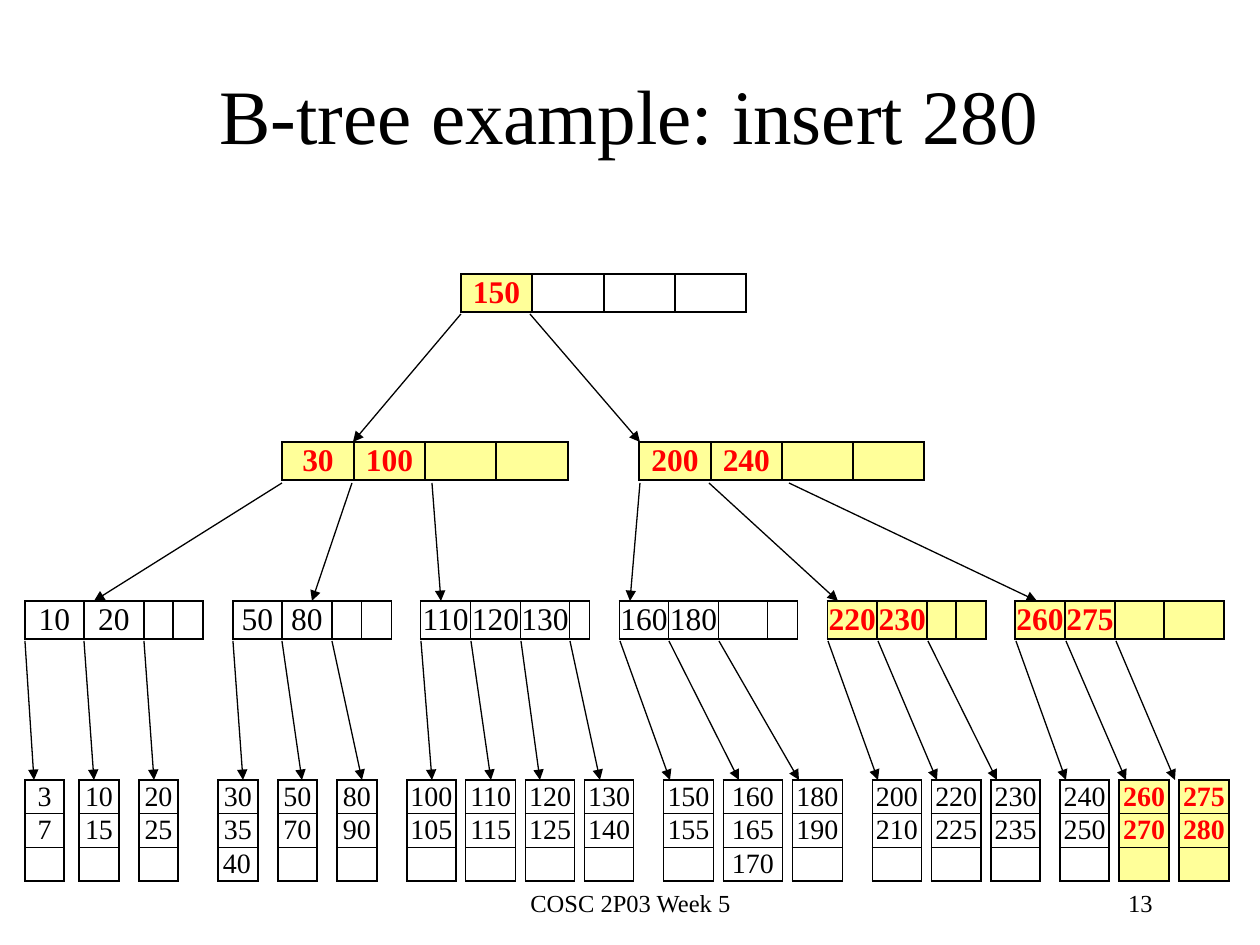
"""Build the B-tree insertion slide: three levels of index nodes above a row of leaves."""
import pptx
import pptx.dml.color
import pptx.enum.shapes
import pptx.enum.text
import pptx.oxml
import pptx.oxml.ns
import pptx.util

PX = pptx.util.Inches(1) // 126
FONT = "Times New Roman"
BLACK, RED, YELLOW, WHITE = "000000", "FF0000", "FFFF99", "FFFFFF"
NO_GRID = "{2D5ABB26-0587-4C30-8999-92F81FD0307C}"
ALIGN = pptx.enum.text.PP_ALIGN
ANCHOR = pptx.enum.text.MSO_ANCHOR
NODE_HEIGHT, LEAF_ROW_HEIGHT = 38, 31
NODE_SIZE, LEAF_SIZE = 18, 16

LABELS = [
    ("B-tree example: insert 280", (94, 35, 1071, 158), 44, ALIGN.CENTER, ANCHOR.MIDDLE),
    ("COSC 2P03 Week 5", (431, 882, 399, 63), 14, ALIGN.CENTER, ANCHOR.TOP),
    ("13", (903, 882, 262, 63), 14, ALIGN.RIGHT, ANCHOR.TOP),
]

# Each node: cell edges, keys, number of highlighted cells
ROOT = [((461, 532, 604, 675, 746), ["150"], 1)]
BRANCHES = [
    ((282, 354, 425, 496, 568), ["30", "100"], 4),
    ((639, 711, 782, 853, 924), ["200", "240"], 4),
]
INDEX = [
    ((25, 84, 144, 173, 203), ["10", "20"], 0),
    ((233, 282, 332, 362, 392), ["50", "80"], 0),
    ((421, 471, 521, 570, 590), ["110", "120", "130"], 0),
    ((620, 669, 719, 768, 798), ["160", "180"], 0),
    ((828, 878, 928, 957, 987), ["220", "230"], 4),
    ((1016, 1066, 1116, 1165, 1225), ["260", "275"], 4),
]
LEAVES = [
    ((25, 64), ["3", "7"], 0), ((79, 119), ["10", "15"], 0),
    ((139, 178), ["20", "25"], 0), ((218, 258), ["30", "35", "40"], 0),
    ((278, 317), ["50", "70"], 0), ((337, 377), ["80", "90"], 0),
    ((407, 456), ["100", "105"], 0), ((466, 516), ["110", "115"], 0),
    ((526, 575), ["120", "125"], 0), ((585, 634), ["130", "140"], 0),
    ((664, 714), ["150", "155"], 0), ((724, 783), ["160", "165", "170"], 0),
    ((793, 843), ["180", "190"], 0), ((873, 922), ["200", "210"], 0),
    ((932, 982), ["220", "225"], 0), ((992, 1041), ["230", "235"], 0),
    ((1061, 1110), ["240", "250"], 0), ((1120, 1170), ["260", "270"], 3),
    ((1180, 1230), ["275", "280"], 3),
]
LEFT_ALIGNED = {"40"}
LEVELS = [
    (274, NODE_HEIGHT, 1, NODE_SIZE, ROOT),
    (442, NODE_HEIGHT, 1, NODE_SIZE, BRANCHES),
    (601, NODE_HEIGHT, 1, NODE_SIZE, INDEX),
    (780, LEAF_ROW_HEIGHT, 3, LEAF_SIZE, LEAVES),
]

ROOT_POINTERS = [(461, 353), (530, 640)]
BRANCH_POINTERS = [(282, 94), (352, 312), (432, 441), (640, 630), (709, 838), (789, 1037)]
LEAF_TIPS = [
    (34, 94, 154), (243, 302, 362), (432, 491, 540, 600),
    (670, 739, 799), (878, 937, 997), (1066, 1126, 1175),
]
INDEX_POINTERS = [
    pair for (edges, _, _), tips in zip(INDEX, LEAF_TIPS) for pair in zip(edges, tips)
]
POINTERS = [(314, 442, ROOT_POINTERS), (483, 601, BRANCH_POINTERS), (641, 780, INDEX_POINTERS)]


def colour(value):
    return pptx.dml.color.RGBColor.from_string(value)


def apply(target, values):
    for name, value in values.items():
        setattr(target, name, value)


def write(paragraph, text, size, ink, bold, align):
    paragraph.alignment = align
    run = paragraph.add_run()
    run.text = text
    apply(run.font, {"name": FONT, "size": pptx.util.Pt(size), "bold": bold})
    run.font.color.rgb = colour(ink)


def add_label(slide, text, box, size, align, anchor):
    frame = slide.shapes.add_textbox(*(v * PX for v in box)).text_frame
    apply(frame, {"word_wrap": True, "vertical_anchor": anchor})
    write(frame.paragraphs[0], text, size, BLACK, False, align)


def add_pointer(slide, start, top, tip, bottom):
    pointer = slide.shapes.add_connector(
        pptx.enum.shapes.MSO_CONNECTOR.STRAIGHT, start * PX, top * PX, tip * PX, bottom * PX)
    pointer.line.width = pptx.util.Pt(0.75)
    pointer.line.color.rgb = colour(BLACK)
    line = pointer.line._get_or_add_ln()
    line.append(pptx.oxml.parse_xml(
        f'<a:tailEnd {pptx.oxml.ns.nsdecls("a")} type="triangle"/>'))
    line.getparent().append(pptx.oxml.parse_xml(
        f'<a:effectLst {pptx.oxml.ns.nsdecls("a")}/>'))


def add_borders(cell, sides):
    for position, side in enumerate(sides):
        cell._tc.get_or_add_tcPr().insert(position, pptx.oxml.parse_xml(
            f'<a:ln{side} {pptx.oxml.ns.nsdecls("a")} w="12700"><a:solidFill>'
            f'<a:srgbClr val="{BLACK}"/></a:solidFill></a:ln{side}>'))


def fill_cell(cell, key, size, marked, margin):
    apply(cell, {"margin_left": margin, "margin_right": margin, "margin_top": 0,
                 "margin_bottom": 0, "vertical_anchor": ANCHOR.MIDDLE})
    paragraph = cell.text_frame.paragraphs[0]
    if key:
        align = ALIGN.LEFT if key in LEFT_ALIGNED else ALIGN.CENTER
        write(paragraph, key, size, RED if marked else BLACK, marked, align)
    else:
        paragraph._p.get_or_add_endParaRPr().set("sz", str(size * 100))


def add_level(slide, top, row_height, row_count, size, nodes):
    edges = [edge for node_edges, _, _ in nodes for edge in node_edges]
    table = slide.shapes.add_table(
        row_count, len(edges) - 1, edges[0] * PX, top * PX,
        (edges[-1] - edges[0]) * PX, row_count * row_height * PX).table
    apply(table, {"first_row": False, "horz_banding": False})
    table._tbl.tblPr.find(pptx.oxml.ns.qn("a:tableStyleId")).text = NO_GRID
    for column, left, right in zip(table.columns, edges, edges[1:]):
        column.width = (right - left) * PX
    for row in table.rows:
        row.height = row_height * PX

    contents = {}
    first = 0
    for node_edges, keys, marked_count in nodes:
        width = len(node_edges) - 1
        narrow_leaf = row_count > 1 and node_edges[-1] - node_edges[0] <= 40
        for slot in range(width * row_count):
            key = keys[slot] if slot < len(keys) else ""
            contents[slot // width, first + slot % width] = (
                key, slot < marked_count, 5 * PX if narrow_leaf else 0)
        first += width + 1

    for row in range(row_count):
        for column in range(len(edges) - 1):
            cell = table.cell(row, column)
            in_node = (row, column) in contents
            key, marked, margin = contents.get((row, column), ("", False, 0))
            fill_cell(cell, key, size, marked, margin)
            if in_node:
                cell.fill.solid()
                cell.fill.fore_color.rgb = colour(YELLOW if marked else WHITE)
            else:
                cell.fill.background()
            add_borders(cell, "LRTB" if in_node else "LR")


def main():
    deck = pptx.Presentation()
    apply(deck, {"slide_width": 1260 * PX, "slide_height": 945 * PX})
    slide = deck.slides.add_slide(deck.slide_layouts[6])
    for label in LABELS:
        add_label(slide, *label)
    for top, bottom, pairs in POINTERS:
        for start, tip in pairs:
            add_pointer(slide, start, top, tip, bottom)
    for level in LEVELS:
        add_level(slide, *level)
    deck.save("out.pptx")


if __name__ == "__main__":
    main()
